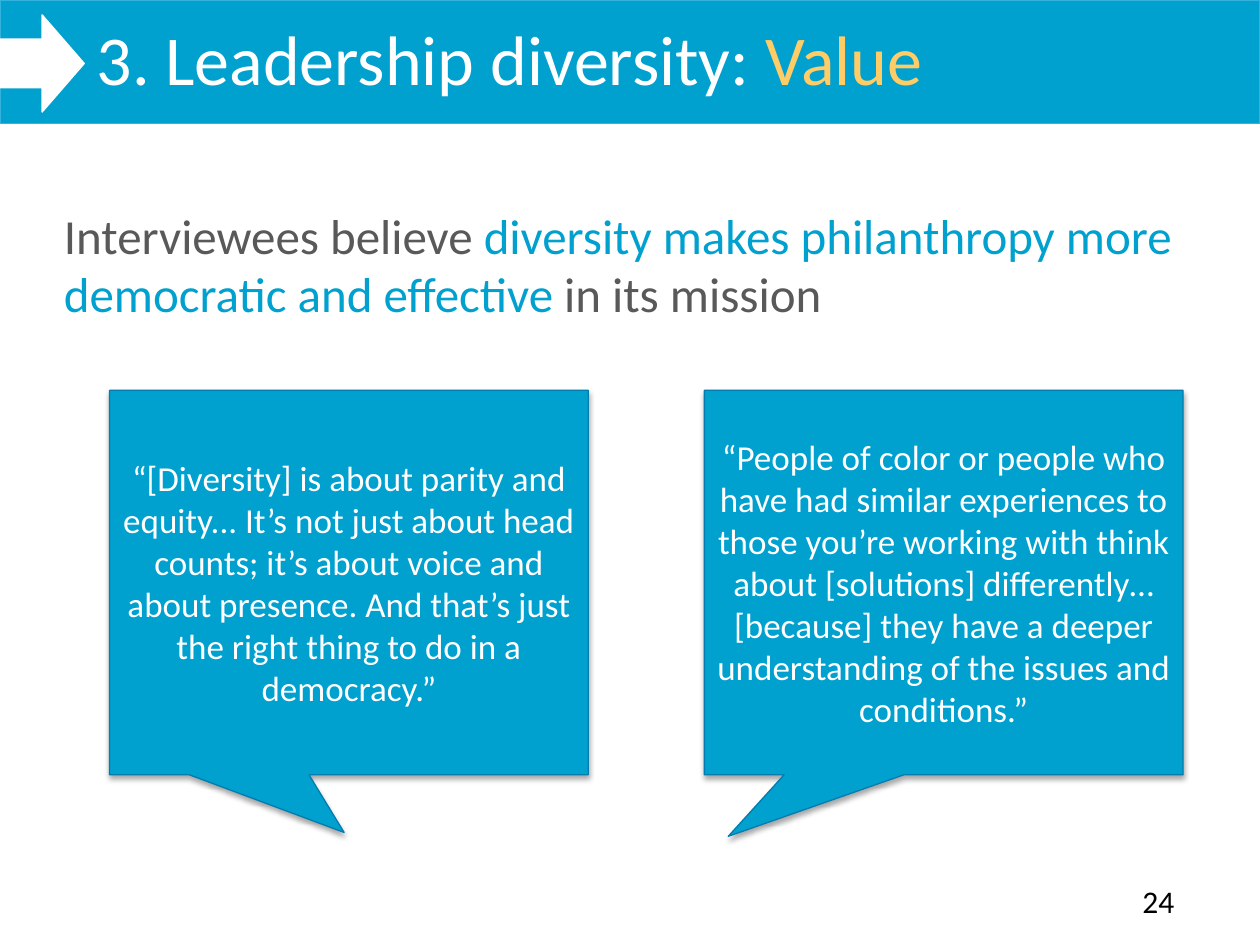
import pptx
import pptx.util
import pptx.dml.color
import pptx.enum.shapes
import pptx.enum.text
import pptx.oxml
import pptx.oxml.ns
from pptx.util import Cm

SHAPE = pptx.enum.shapes.MSO_SHAPE
ALIGN = pptx.enum.text.PP_ALIGN
ANCHOR = pptx.enum.text.MSO_ANCHOR

THEME = {
    "font": "Calibri",
    "blue": "00A0CF", "band_line": "32B2DD", "callout_line": "007CAE",
    "white": "FFFFFF", "gold": "FFCC66", "grey": "595959", "black": "000000",
    "title": 40, "message": 28, "quote": 20, "number": 18, "line": 0.75,
}

TITLE = [("3. Leadership diversity: ", "white"), ("Value", "gold")]
MESSAGE = [
    ("Interviewees believe ", "grey"),
    ("diversity makes philanthropy more democratic and effective ", "blue"),
    ("in its mission", "grey"),
]
PAGE_NUMBER = [("24", "black")]
# Each quote comes with the position of its callout's tip.
QUOTES = [
    ("“[Diversity] is about parity and equity... It’s not just about head counts; "
     "it’s about voice and about presence. And that’s just the right thing to do "
     "in a democracy.”", (-0.01, 0.65)),
    ("“People of color or people who have had similar experiences to those you’re "
     "working with think about [solutions] differently…[because] they have a deeper "
     "understanding of the issues and conditions.”", (-0.45, 0.66)),
]

SLIDE_WIDTH, SLIDE_HEIGHT = Cm(25.4), Cm(19.05)
BAND_HEIGHT = Cm(2.49)
CALLOUT_LEFT, CALLOUT_TOP = Cm(2.21), Cm(7.87)
CALLOUT_WIDTH, CALLOUT_HEIGHT = Cm(9.65), Cm(7.75)
CALLOUT_STEP = Cm(11.99)


def color(name):
    return pptx.dml.color.RGBColor.from_string(THEME[name])


def write_text(shape, runs, size, align=ALIGN.LEFT, anchor=ANCHOR.TOP, space_after=0):
    """Fill the shape with one paragraph made of (text, colour name) runs."""
    frame = shape.text_frame
    frame.word_wrap = True
    frame.vertical_anchor = anchor
    paragraph = frame.paragraphs[0]
    paragraph.alignment = align
    paragraph.space_after = pptx.util.Pt(space_after)
    for text, color_name in runs:
        run = paragraph.add_run()
        run.text = text
        run.font.name = THEME["font"]
        run.font.size = pptx.util.Pt(THEME[size])
        run.font.color.rgb = color(color_name)


def add_text(slide, box, runs, size, **text_format):
    write_text(slide.shapes.add_textbox(*box), runs, size, **text_format)


def add_filled_shape(slide, kind, box, fill, line):
    shape = slide.shapes.add_shape(kind, *box)
    shape.shadow.inherit = False
    shape.fill.solid()
    shape.fill.fore_color.rgb = color(fill)
    shape.line.color.rgb = color(line)
    shape.line.width = pptx.util.Pt(THEME["line"])
    return shape


def add_soft_shadow(shape):
    effects = shape._element.spPr.find(pptx.oxml.ns.qn("a:effectLst"))
    effects.append(pptx.oxml.parse_xml(
        f'<a:outerShdw {pptx.oxml.ns.nsdecls("a")} blurRad="{pptx.util.Pt(3.1)}" '
        f'dist="{pptx.util.Pt(1.8)}" dir="5400000" rotWithShape="0">'
        f'<a:srgbClr val="{THEME["black"]}"><a:alpha val="35000"/></a:srgbClr>'
        '</a:outerShdw>'))


def add_quote(slide, index, quote, tip):
    box = (CALLOUT_LEFT + index * CALLOUT_STEP, CALLOUT_TOP,
           CALLOUT_WIDTH, CALLOUT_HEIGHT)
    callout = add_filled_shape(slide, SHAPE.RECTANGULAR_CALLOUT, box,
                               "blue", "callout_line")
    callout.adjustments[0], callout.adjustments[1] = tip
    add_soft_shadow(callout)
    write_text(callout, [(quote, "white")], "quote",
               align=ALIGN.CENTER, anchor=ANCHOR.MIDDLE)


def main():
    presentation = pptx.Presentation()
    presentation.slide_width, presentation.slide_height = SLIDE_WIDTH, SLIDE_HEIGHT
    slide = presentation.slides.add_slide(presentation.slide_layouts[6])

    add_filled_shape(slide, SHAPE.RECTANGLE, (0, 0, SLIDE_WIDTH, BAND_HEIGHT),
                     "blue", "band_line")
    add_filled_shape(slide, SHAPE.RIGHT_ARROW, (0, Cm(0.3), Cm(1.7), Cm(1.96)),
                     "white", "white")
    add_text(slide, (Cm(1.7), Cm(0.18), Cm(23.7), Cm(3.18)), TITLE, "title")
    add_text(slide, (Cm(22.78), Cm(17.65), Cm(1.35), Cm(1.02)), PAGE_NUMBER, "number")
    add_text(slide, (Cm(1.04), Cm(4.01), Cm(23.11), Cm(2.64)), MESSAGE, "message",
             space_after=12)
    for index, (quote, tip) in enumerate(QUOTES):
        add_quote(slide, index, quote, tip)

    presentation.save("out.pptx")


if __name__ == "__main__":
    main()
